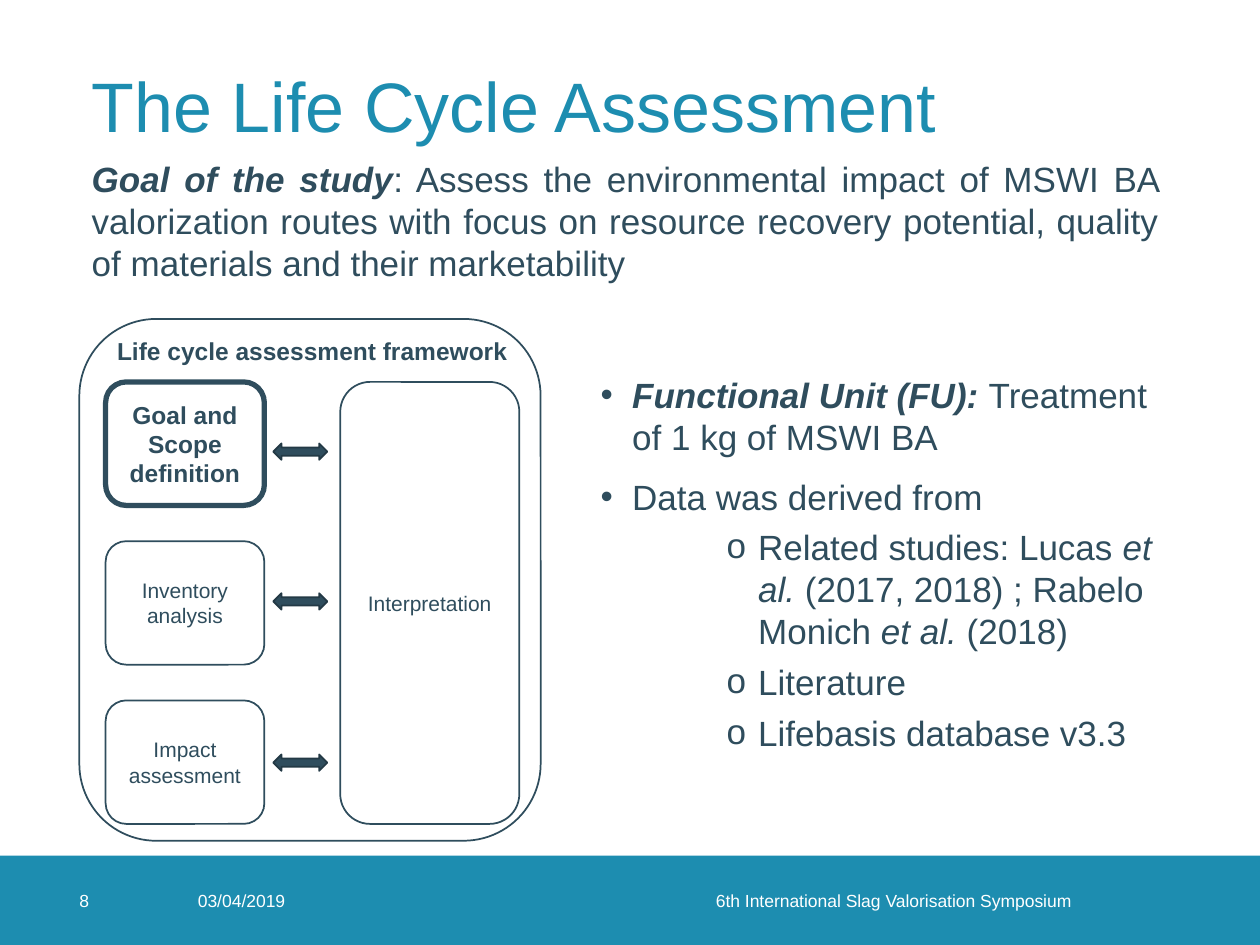
from lxml.etree import SubElement
from pptx import Presentation
from pptx.dml.color import RGBColor
from pptx.enum.shapes import MSO_SHAPE
from pptx.enum.text import MSO_ANCHOR, MSO_AUTO_SIZE, PP_ALIGN
from pptx.oxml.ns import qn
from pptx.util import Cm, Pt

FONT = "Arial"
BLUE, SLATE, DARK, WHITE = "1D8DB0", "2F4D5D", "233945", "FFFFFF"

STEPS = [  # label, text size, bold, line width, top of its arrow
    ("Goal and Scope definition", 14, True, 3, 8.94),
    ("Inventory analysis", 12, False, 1, 11.96),
    ("Impact assessment", 12, False, 1, 15.21),
]
GOAL = [
    ("Goal of the study", "bi"),
    (": Assess the environmental impact of MSWI BA valorization routes with focus on "
     "resource recovery potential, quality of materials and their marketability", ""),
]
POINTS = [  # level, runs
    (0, [("Functional Unit (FU): ", "bi"), ("Treatment of 1 kg of MSWI BA", "")]),
    (0, [("Data was derived from", "")]),
    (2, [("Related studies: Lucas ", ""), ("et al. ", "i"),
         ("(2017, 2018) ; Rabelo Monich ", ""), ("et al. ", "i"), ("(2018)", "")]),
    (2, [("Literature", "")]),
    (2, [("Lifebasis database v3.3", "")]),
]
FOOTER = [  # left, width, text, alignment, right inset
    (3.99, 2.01, "03/04/2019", PP_ALIGN.LEFT, 0),
    (11.94, 10.26, "6th International Slag Valorisation Symposium ", PP_ALIGN.RIGHT, 0.51),
    (1.6, 1.8, "8", PP_ALIGN.LEFT, 0),
]


def color(value):
    return RGBColor.from_string(value)


def add_runs(paragraph, runs, size, tint=SLATE):
    """Add (text, style) runs, where style holds b for bold and i for italic."""
    for text, style in runs:
        span = paragraph.add_run()
        span.text = text
        font = span.font
        font.name, font.size = FONT, Pt(size)
        font.bold, font.italic = "b" in style, "i" in style
        font.color.rgb = color(tint)


def add_text(page, area, runs, size, tint=SLATE, align=PP_ALIGN.LEFT, wrap=True):
    box = page.shapes.add_textbox(*map(Cm, area))
    box.text_frame.word_wrap = wrap
    paragraph = box.text_frame.paragraphs[0]
    paragraph.alignment = align
    add_runs(paragraph, runs, size, tint)
    return box


def add_shape(page, kind, area, fill=None, line=None, width=1):
    shape = page.shapes.add_shape(kind, *map(Cm, area))
    shape.shadow.inherit = False
    if fill:
        shape.fill.solid()
        shape.fill.fore_color.rgb = color(fill)
    else:
        shape.fill.background()
    if line:
        shape.line.color.rgb = color(line)
        shape.line.width = Pt(width)
    else:
        shape.line.fill.background()
    return shape


def add_round_box(page, area, label="", size=12, bold=False, width=1):
    shape = add_shape(page, MSO_SHAPE.ROUNDED_RECTANGLE, area, line=SLATE, width=width)
    if label:
        frame = shape.text_frame
        frame.word_wrap = True
        frame.vertical_anchor = MSO_ANCHOR.MIDDLE
        frame.paragraphs[0].alignment = PP_ALIGN.CENTER
        add_runs(frame.paragraphs[0], [(label, "b" if bold else "")], size)


def set_bullet(paragraph, character, indent):
    """Give the paragraph a bullet that hangs 0.25 inch before the indent."""
    properties = paragraph._p.get_or_add_pPr()
    properties.set("marL", str(indent))
    properties.set("indent", str(-Cm(0.635)))
    SubElement(properties, qn("a:buFont")).set("typeface", FONT)
    SubElement(properties, qn("a:buChar")).set("char", character)


def add_title(page, text):
    title = page.shapes.title
    title.left, title.top, title.width, title.height = map(Cm, (1.6, 0.61, 22.2, 3.2))
    frame = title.text_frame
    frame.auto_size = MSO_AUTO_SIZE.NONE
    frame.vertical_anchor = MSO_ANCHOR.MIDDLE
    paragraph = frame.paragraphs[0]
    paragraph.alignment = PP_ALIGN.LEFT
    paragraph.line_spacing = 0.9
    add_runs(paragraph, [(text, "")], 40, BLUE)


def add_points(page):
    frame = page.shapes.add_textbox(Cm(11.86), Cm(6.2), Cm(12.17), Cm(10.31)).text_frame
    frame.word_wrap = True
    frame.margin_top = Cm(1.33)
    for index, (level, runs) in enumerate(POINTS):
        paragraph = frame.add_paragraph() if index else frame.paragraphs[0]
        paragraph.level = level
        set_bullet(paragraph, "o" if level else "•", Cm(3.175 if level else 0.635))
        if index:
            paragraph.space_before = Pt(5 if level else 10)
        add_runs(paragraph, runs, 20)


def add_framework(page):
    top, height, pitch = 7.7, 2.49, 3.21
    for index, (label, size, bold, width, arrow_top) in enumerate(STEPS):
        add_round_box(page, (2.13, top + index * pitch, 3.2, height), label, size, bold, width)
        add_shape(page, MSO_SHAPE.LEFT_RIGHT_ARROW, (5.51, arrow_top, 1.09, 0.33), SLATE, DARK)
    add_round_box(page, (6.86, top, 3.61, 2 * pitch + height), "Interpretation")
    add_round_box(page, (1.6, 6.43, 9.3, 10.52))
    add_text(page, (2.11, 6.65, 8.41, 0.86),
             [("Life cycle assessment framework", "b")], 14, wrap=False)


def add_footer(page):
    top, height = 17.25, 1.8
    add_shape(page, MSO_SHAPE.RECTANGLE, (0, top, 25.4, height), BLUE)
    for left, width, text, align, inset in FOOTER:
        box = add_text(page, (left, top, width, height), [(text, "")], 10, WHITE, align)
        frame = box.text_frame
        frame.vertical_anchor = MSO_ANCHOR.MIDDLE
        frame.margin_left = frame.margin_top = frame.margin_bottom = 0
        frame.margin_right = Cm(inset)


def main():
    deck = Presentation()
    deck.slide_width, deck.slide_height = Cm(25.4), Cm(19.05)
    page = deck.slides.add_slide(deck.slide_layouts[5])
    add_footer(page)
    add_points(page)
    add_title(page, "The Life Cycle Assessment")
    add_framework(page)
    add_text(page, (1.6, 3.05, 22.02, 2.82), GOAL, 20, align=PP_ALIGN.JUSTIFY)
    deck.save("out.pptx")


if __name__ == "__main__":
    main()
